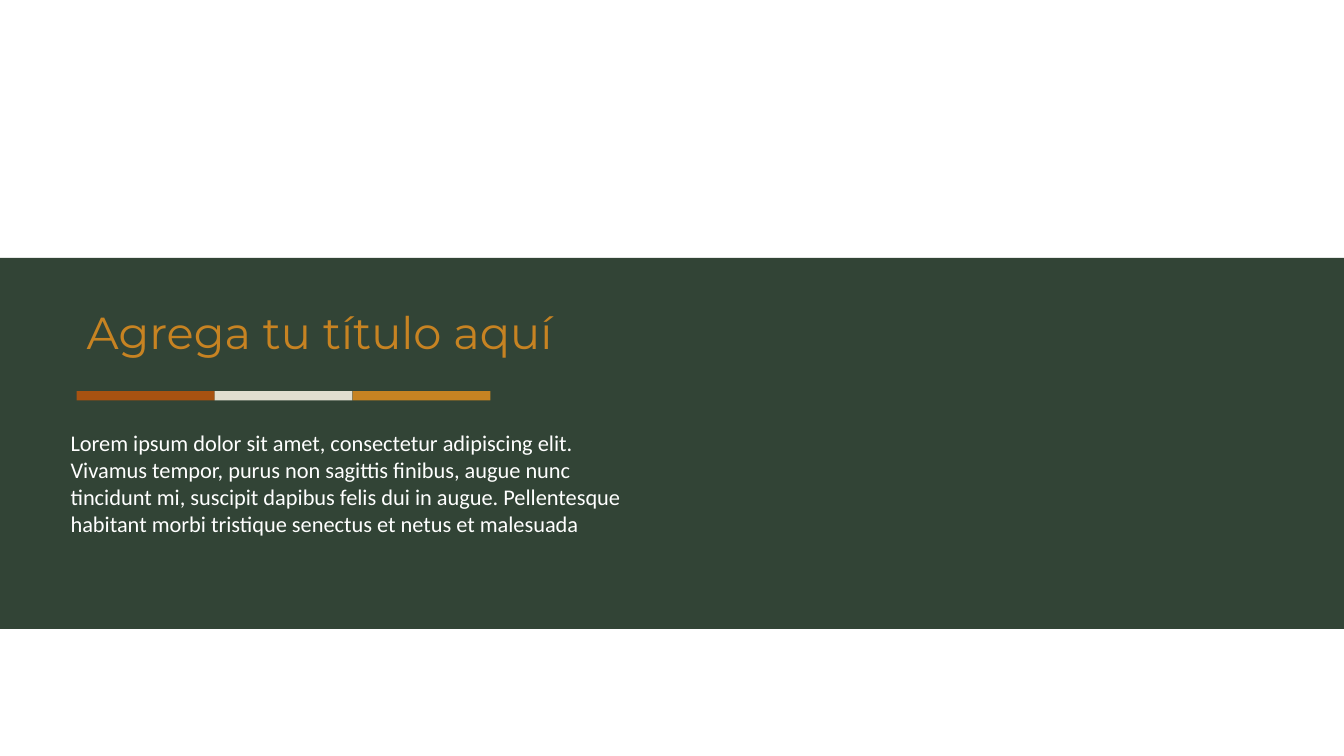
from dataclasses import dataclass

import pptx
import pptx.dml.color
import pptx.enum.shapes
import pptx.enum.text
import pptx.oxml
import pptx.oxml.ns
import pptx.util

WIDTH, HEIGHT = 13.33, 7.5
TITLE = "Agrega tu título aquí"
BODY = (
    "Lorem ipsum dolor sit amet, consectetur adipiscing elit. Vivamus tempor, "
    "purus non sagittis finibus, augue nunc tincidunt mi, suscipit dapibus felis "
    "dui in augue. Pellentesque habitant morbi tristique senectus et netus et malesuada"
)


@dataclass(frozen=True)
class Theme:
    green: str = "324436"
    rust: str = "A75211"
    cream: str = "E1DECF"
    ochre: str = "C78322"
    white: str = "FFFFFF"
    title_font: str = "Montserrat"
    body_font: str = "Calibri"
    title_size: int = 32
    body_size: int = 16


THEME = Theme()


def rgb(color):
    return pptx.dml.color.RGBColor.from_string(color)


def place(sp, box):
    sp.left, sp.top, sp.width, sp.height = map(pptx.util.Inches, box)


def share(box, x, y, w, h):
    """Return the part of box given by shares of its width and height."""
    left, top, width, height = box
    return left + x * width, top + y * height, w * width, h * height


def add_rect(shapes, box, color):
    sp = shapes.add_shape(
        pptx.enum.shapes.MSO_SHAPE.RECTANGLE, *map(pptx.util.Inches, box)
    )
    sp.shadow.inherit = False
    sp.fill.solid()
    sp.fill.fore_color.rgb = rgb(color)
    sp.line.fill.background()
    return sp


def fill_placeholder(sp, box, text, font, size, color):
    place(sp, box)
    tf = sp.text_frame
    tf.word_wrap = True
    tf.auto_size = pptx.enum.text.MSO_AUTO_SIZE.NONE
    tf.vertical_anchor = pptx.enum.text.MSO_ANCHOR.TOP
    p = tf.paragraphs[0]
    p.text = text
    p.alignment = pptx.enum.text.PP_ALIGN.LEFT
    p.space_before = pptx.util.Pt(0)
    p.font.name = font
    p.font.size = pptx.util.Pt(size)
    p.font.color.rgb = rgb(color)
    return p


def remove_bullet(p):
    pPr = p._p.get_or_add_pPr()
    pPr.set("marL", "0")
    pPr.set("indent", "0")
    ns = pptx.oxml.ns.nsdecls("a")
    bullet = pptx.oxml.parse_xml(f"<a:buNone {ns}/>")
    pPr.insert_element_before(bullet, "a:tabLst", "a:defRPr", "a:extLst")


def add_color_strip(slide, box, colors):
    """Split the box into equal bars, one per color, as a group."""
    group = slide.shapes.add_group_shape()
    step = 1 / len(colors)
    for i, color in enumerate(colors):
        add_rect(group.shapes, share(box, i * step, 0, step, 1), color)


def add_title_band(slide, box):
    band = add_rect(slide.shapes, box, THEME.green)
    slide.shapes._spTree.insert(2, band._element)  # behind the placeholders

    fill_placeholder(
        slide.shapes.title, share(box, 0.057, 0.114, 0.404, 0.174),
        TITLE, THEME.title_font, THEME.title_size, THEME.ochre,
    )
    add_color_strip(
        slide, share(box, 0.057, 0.359, 0.308, 0.025),
        (THEME.rust, THEME.cream, THEME.ochre),
    )
    p = fill_placeholder(
        slide.placeholders[1], share(box, 0.045, 0.448, 0.446, 0.321),
        BODY, THEME.body_font, THEME.body_size, THEME.white,
    )
    remove_bullet(p)


def main():
    prs = pptx.Presentation()
    prs.slide_width = pptx.util.Inches(WIDTH)
    prs.slide_height = pptx.util.Inches(HEIGHT)
    slide = prs.slides.add_slide(prs.slide_layouts[1])
    page = (0, 0, WIDTH, HEIGHT)
    add_title_band(slide, share(page, 0, 0.341, 1, 0.491))
    prs.save("out.pptx")


if __name__ == "__main__":
    main()
